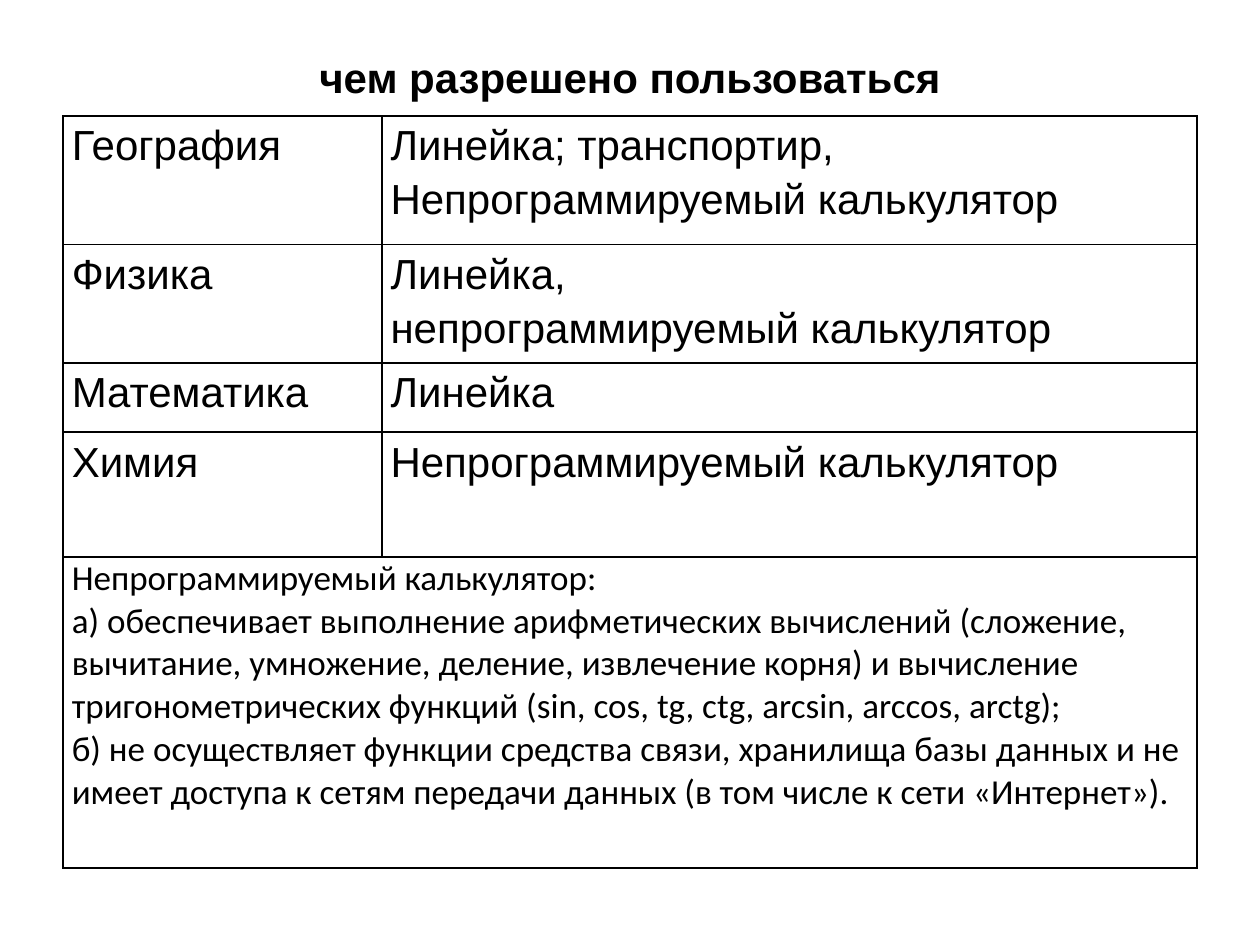
from lxml.etree import SubElement
from pptx import Presentation
from pptx.dml.color import RGBColor as Color
from pptx.enum.text import MSO_ANCHOR as Anchor, PP_ALIGN as Align
from pptx.oxml.ns import qn
from pptx.util import Inches, Pt

COLORS = {"ink": "000000", "paper": "FFFFFF"}
WIDTH, HEIGHT = 10, 7.5
MARGIN = WIDTH / 20
TABLE_TOP = 0.92
COLUMNS = [2.53, 6.47]
ROWS = [1.02, 0.94, 0.55, 0.99, 2.47]

TITLE_FONT = {"name": "Arial", "size": Pt(24), "bold": True}
SUBJECT_FONT = {"name": "Arial", "size": Pt(24), "bold": False}
NOTE_FONT = {"name": "Calibri", "size": Pt(20), "bold": False}

SUBJECTS = [
    ("География", ["Линейка; транспортир, Непрограммируемый калькулятор"]),
    ("Физика", ["Линейка,", "непрограммируемый калькулятор"]),
    ("Математика", ["Линейка"]),
    ("Химия", ["Непрограммируемый калькулятор"]),
]
CALCULATOR_NOTE = [
    "Непрограммируемый калькулятор:",
    "а) обеспечивает выполнение арифметических вычислений (сложение, вычитание, "
    "умножение, деление, извлечение корня) и вычисление тригонометрических функций "
    "(sin, cos, tg, ctg, arcsin, arccos, arctg);",
    "б) не осуществляет функции средства связи, хранилища базы данных и не имеет "
    "доступа к сетям передачи данных (в том числе к сети «Интернет»).",
]


def set_all(target, values):
    for name, value in values.items():
        setattr(target, name, value)


def write(frame, lines, font, **layout):
    for index, line in enumerate(lines):
        para = frame.add_paragraph() if index else frame.paragraphs[0]
        set_all(para, layout)
        span = para.add_run()
        span.text = line
        set_all(span.font, font)
        span.font.color.rgb = Color.from_string(COLORS["ink"])


def add_title(page, text):
    title = page.shapes.title
    set_all(title, {"left": Inches(MARGIN), "top": Inches(0.3),
                    "width": Inches(WIDTH - 2 * MARGIN), "height": Inches(0.61)})
    title.text_frame.vertical_anchor = Anchor.MIDDLE
    write(title.text_frame, [text], TITLE_FONT, alignment=Align.CENTER)


def style_cell(cell):
    set_all(cell, {"margin_left": Inches(0.07), "margin_right": Inches(0.07),
                   "margin_top": 0, "margin_bottom": 0, "vertical_anchor": Anchor.TOP})
    properties = cell._tc.get_or_add_tcPr()
    for side in ("lnL", "lnR", "lnT", "lnB"):
        border = SubElement(properties, qn(f"a:{side}"), w=str(Pt(1)))
        fill = SubElement(border, qn("a:solidFill"))
        SubElement(fill, qn("a:srgbClr"), val=COLORS["ink"])
    cell.fill.solid()
    cell.fill.fore_color.rgb = Color.from_string(COLORS["paper"])


def add_rules_table(page):
    table = page.shapes.add_table(
        len(ROWS), len(COLUMNS), Inches(MARGIN), Inches(TABLE_TOP),
        Inches(sum(COLUMNS)), Inches(sum(ROWS))).table
    set_all(table, {"first_row": False, "horz_banding": False})
    for column, width in zip(table.columns, COLUMNS):
        column.width = Inches(width)
    for row, height in zip(table.rows, ROWS):
        row.height = Inches(height)
    for cell in table.iter_cells():
        style_cell(cell)
    for index, (subject, tools) in enumerate(SUBJECTS):
        for column, lines in enumerate(([subject], tools)):
            write(table.cell(index, column).text_frame, lines, SUBJECT_FONT,
                  line_spacing=1.15)
    note = table.cell(len(SUBJECTS), 0)
    note.merge(table.cell(len(SUBJECTS), 1))
    write(note.text_frame, CALCULATOR_NOTE, NOTE_FONT)


def main():
    deck = Presentation()
    set_all(deck, {"slide_width": Inches(WIDTH), "slide_height": Inches(HEIGHT)})
    page = deck.slides.add_slide(deck.slide_layouts.get_by_name("Title Only"))
    add_title(page, "чем разрешено пользоваться")
    add_rules_table(page)
    deck.save("out.pptx")


if __name__ == "__main__":
    main()
